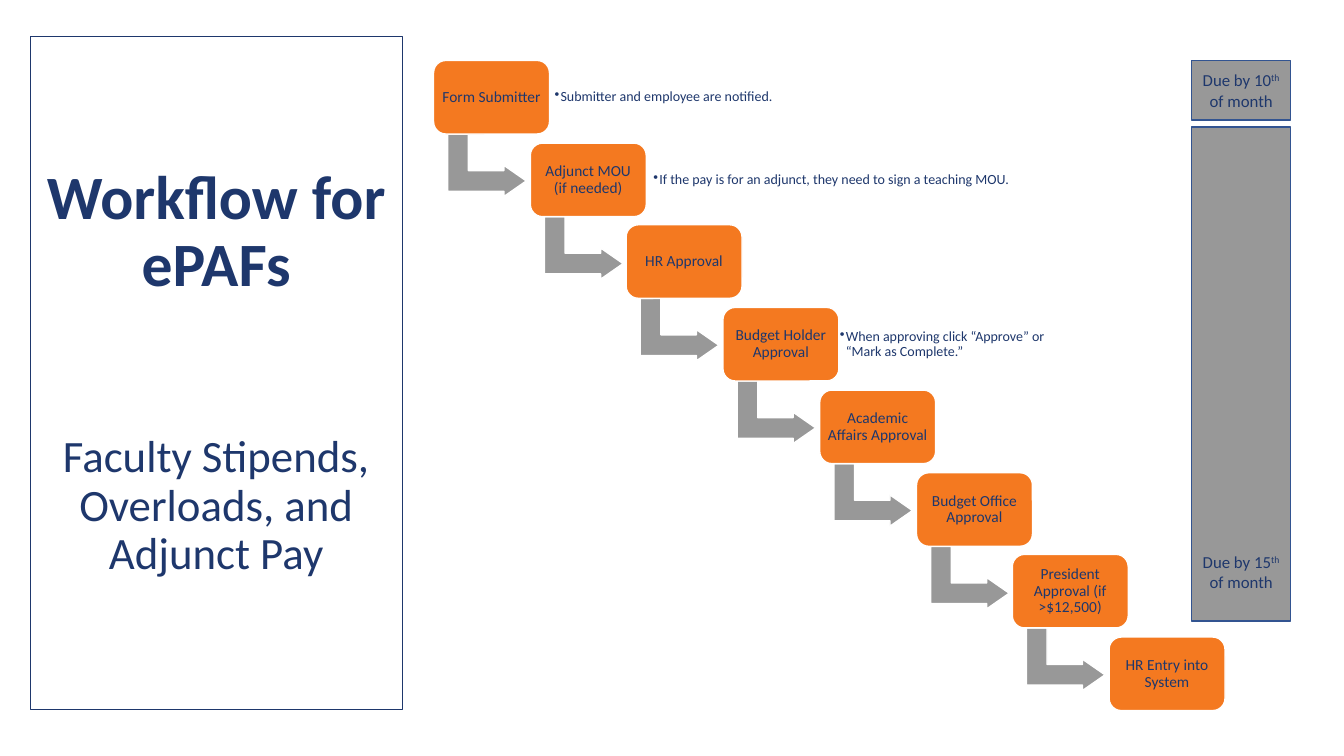
from dataclasses import dataclass

from lxml import etree
from pptx import Presentation
from pptx.dml.color import RGBColor
from pptx.enum.shapes import MSO_SHAPE
from pptx.enum.text import MSO_ANCHOR, PP_ALIGN
from pptx.oxml.ns import qn
from pptx.shapes.autoshape import Shape
from pptx.slide import Slide
from pptx.util import Emu, Pt

RECTANGLE = MSO_SHAPE.RECTANGLE
ROUNDED = MSO_SHAPE.ROUNDED_RECTANGLE
BENT_ARROW = MSO_SHAPE.BENT_UP_ARROW
MIDDLE = MSO_ANCHOR.MIDDLE
BOTTOM = MSO_ANCHOR.BOTTOM
CENTER = PP_ALIGN.CENTER
LEFT = PP_ALIGN.LEFT

EMU_PER_PX = 9144
FONT = "Calibri"
COLORS = {
    "navy": "1E376C",
    "orange": "F47920",
    "gray": "989898",
    "blue": "325491",
    "white": "FFFFFF",
}


@dataclass(frozen=True)
class Box:
    left: int
    top: int
    width: int
    height: int


@dataclass(frozen=True)
class Note:
    text: str
    box: Box


@dataclass(frozen=True)
class Deadline:
    day: str
    box: Box
    anchor: MSO_ANCHOR
    bottom_inset: int


STEPS = [
    "Form Submitter",
    "Adjunct MOU (if needed)",
    "HR Approval",
    "Budget Holder Approval",
    "Academic Affairs Approval",
    "Budget Office Approval",
    "President Approval (if >$12,500)",
    "HR Entry into System",
]
FIRST_STEP = Box(430, 60, 115, 73)
LAST_LEFT, LAST_TOP = 1100, 632
ARROW_DX, ARROW_DY = 22, 65
ARROW_WIDTH, ARROW_HEIGHT = 62, 78
ARROW_ADJUSTMENTS = (0.33, 0.25, 0.36)

NOTES = [
    Note("Submitter and employee are notified.", Box(546, 67, 371, 59)),
    Note("If the pay is for an adjunct, they need to sign a teaching MOU.",
         Box(644, 149, 371, 59)),
    Note("When approving click “Approve” or “Mark as Complete.”",
         Box(829, 312, 223, 59)),
]
DEADLINES = [
    Deadline("10", Box(1182, 60, 98, 59), MIDDLE, 5),
    Deadline("15", Box(1182, 126, 98, 490), BOTTOM, 29),
]


def px(length: int) -> Emu:
    return Emu(length * EMU_PER_PX)


def place(box: Box) -> tuple[Emu, Emu, Emu, Emu]:
    return px(box.left), px(box.top), px(box.width), px(box.height)


def color(name: str) -> RGBColor:
    return RGBColor.from_string(COLORS[name])


def add_block(slide: Slide, kind: MSO_SHAPE, box: Box, fill: str | None,
              line: str, line_width: float = 1) -> Shape:
    block = slide.shapes.add_shape(kind, *place(box))
    block.shadow.inherit = False
    if fill is None:
        block.fill.background()
    else:
        block.fill.solid()
        block.fill.fore_color.rgb = color(fill)
    block.line.color.rgb = color(line)
    block.line.width = Pt(line_width)
    return block


def write(holder: Shape, runs: list[str], *, size: int, bold: bool = False,
          align: PP_ALIGN = CENTER, anchor: MSO_ANCHOR = MIDDLE,
          spacing: float = 0.9, after: int = 0, bullet: bool = False,
          superscript: int | None = None, more: bool = False,
          insets: tuple[int, int, int, int] = (10, 5, 10, 5)) -> None:
    frame = holder.text_frame
    frame.word_wrap = True
    frame.vertical_anchor = anchor
    (frame.margin_left, frame.margin_top,
     frame.margin_right, frame.margin_bottom) = map(px, insets)
    paragraph = frame.add_paragraph() if more else frame.paragraphs[0]
    paragraph.alignment = align
    paragraph.line_spacing = spacing
    paragraph.space_after = Pt(after)
    if bullet:
        properties = paragraph._p.get_or_add_pPr()
        properties.set("marL", str(px(6)))
        properties.set("indent", str(px(-6)))
        etree.SubElement(properties, qn("a:buChar")).set("char", "•")
    for index, text in enumerate(runs):
        run = paragraph.add_run()
        run.text = text
        run.font.name = FONT
        run.font.size = Pt(size)
        run.font.bold = bold
        run.font.color.rgb = color("navy")
        if index == superscript:
            run._r.get_or_add_rPr().set("baseline", "30000")


def add_title(slide: Slide) -> None:
    panel = add_block(slide, RECTANGLE, Box(30, 36, 369, 668), None, "navy", 0.75)
    write(panel, ["Workflow for ePAFs"], size=44, bold=True, after=96)
    write(panel, ["Faculty Stipends, Overloads, and Adjunct Pay"], size=32, more=True)


def add_step(slide: Slide, index: int, label: str) -> None:
    last = len(STEPS) - 1
    left = FIRST_STEP.left + round((LAST_LEFT - FIRST_STEP.left) * index / last)
    top = FIRST_STEP.top + round((LAST_TOP - FIRST_STEP.top) * index / last)
    if index < last:
        arrow_box = Box(left + ARROW_DX, top + ARROW_DY, ARROW_WIDTH, ARROW_HEIGHT)
        arrow = add_block(slide, BENT_ARROW, arrow_box, "gray", "white")
        arrow.rotation = 90
        for position, value in enumerate(ARROW_ADJUSTMENTS):
            arrow.adjustments[position] = value
    step_box = Box(left, top, FIRST_STEP.width, FIRST_STEP.height)
    step = add_block(slide, ROUNDED, step_box, "orange", "white")
    write(step, [label], size=11, insets=(4, 4, 4, 4))


def add_note(slide: Slide, note: Note) -> None:
    holder = slide.shapes.add_textbox(*place(note.box))
    write(holder, [note.text], size=10, align=LEFT, bullet=True, insets=(4, 4, 4, 4))


def add_deadline(slide: Slide, deadline: Deadline) -> None:
    bar = add_block(slide, RECTANGLE, deadline.box, "gray", "blue")
    write(bar, [f"Due by {deadline.day}", "th", " of month"], size=12, spacing=1.0,
          anchor=deadline.anchor, superscript=1,
          insets=(10, 5, 10, deadline.bottom_inset))


def main() -> None:
    presentation = Presentation()
    presentation.slide_width = px(1333)
    presentation.slide_height = px(750)
    slide = presentation.slides.add_slide(presentation.slide_layouts[6])
    add_title(slide)
    for index, label in enumerate(STEPS):
        add_step(slide, index, label)
    for note in NOTES:
        add_note(slide, note)
    for deadline in DEADLINES:
        add_deadline(slide, deadline)
    presentation.save("out.pptx")


if __name__ == "__main__":
    main()
